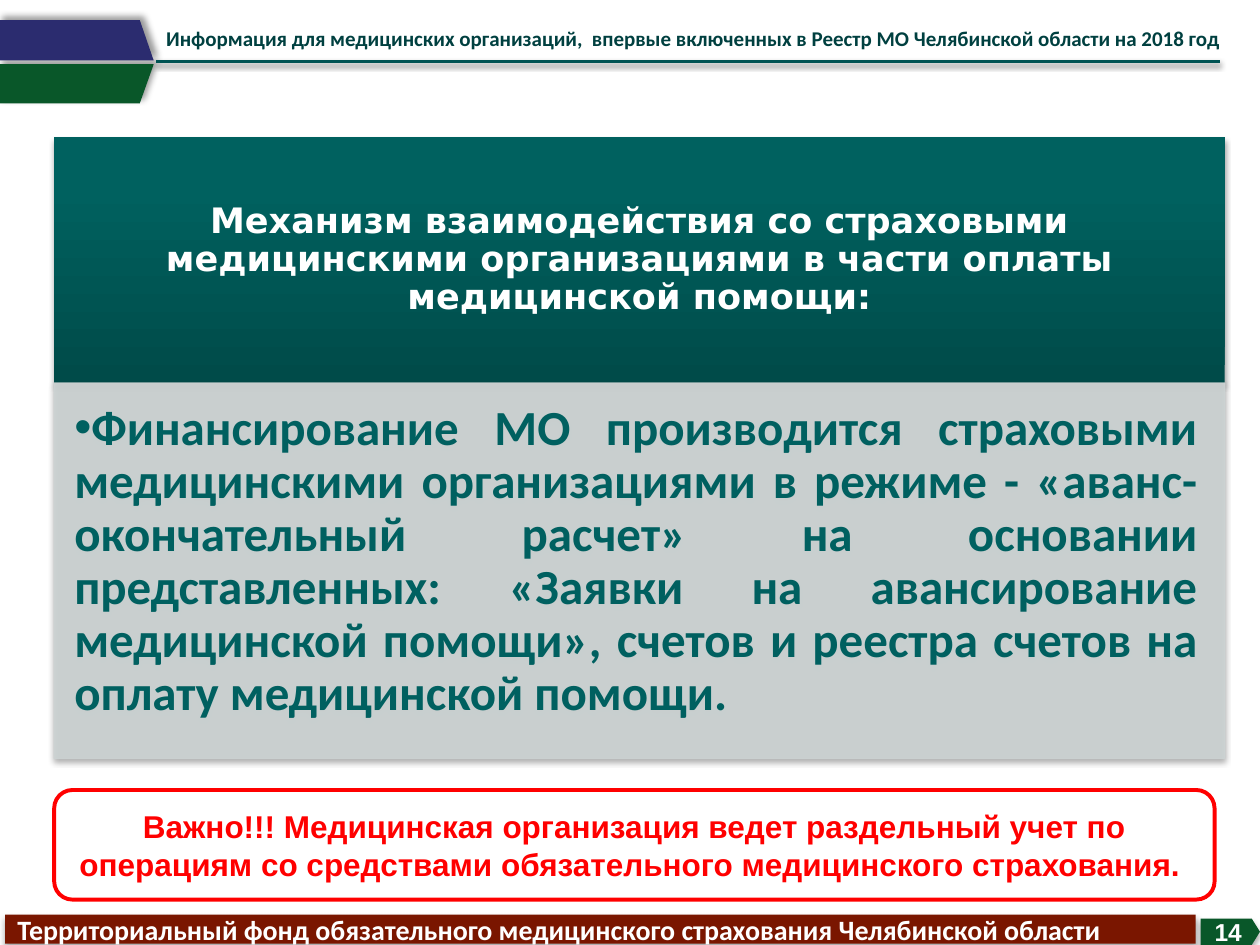
from lxml.etree import SubElement
from pptx import Presentation
from pptx.dml.color import RGBColor
from pptx.enum.shapes import MSO_CONNECTOR, MSO_SHAPE
from pptx.enum.text import MSO_ANCHOR, MSO_AUTO_SIZE, PP_ALIGN
from pptx.oxml.ns import qn
from pptx.util import Inches, Pt

COLORS = {
    "white": "FFFFFF", "red": "FF0000", "green": "095729", "navy": "2B2C6F",
    "rule": "005353", "header": "004040", "panel_dark": "004B49",
    "panel": "00615F", "body": "CCD3D3", "body_text": "006060",
    "footer": "7A1600",
}
# opacity %, blur pt, distance pt, direction in degrees
SHADOWS = {
    "flag": (40, 4, 3, 315), "rule": (38, 3.1, 1.6, 90),
    "panel": (35, 3.1, 1.8, 90), "footer": (32, 3.5, 2.2, 90),
}
CELL = 0.1  # the slide is a grid of 100 columns by 75 rows


def grid(*cells):
    return [Inches(cell * CELL) for cell in cells]


class SlideBuilder:
    def __init__(self, prs):
        self.slide = prs.slides.add_slide(prs.slide_layouts[1])
        self.shapes = self.slide.shapes

    def color(self, name):
        return RGBColor.from_string(COLORS[name])

    def shadow(self, item, name=None):
        """Set the shadow; call after fill and line, as effects follow them."""
        effects = SubElement(item._element.spPr, qn("a:effectLst"))
        if name:
            opacity, blur, distance, angle = SHADOWS[name]
            outer = SubElement(
                effects, qn("a:outerShdw"), blurRad=str(Pt(blur)),
                dist=str(Pt(distance)), dir=str(angle * 60000), rotWithShape="0")
            black = SubElement(outer, qn("a:srgbClr"), val="000000")
            SubElement(black, qn("a:alpha"), val=str(opacity * 1000))

    def paint(self, item, fill, line=None, width=0.75, shadow=None):
        item.fill.solid()
        item.fill.fore_color.rgb = self.color(fill)
        if line:
            item.line.color.rgb = self.color(line)
            item.line.width = Pt(width)
        else:
            item.line.fill.background()
        self.shadow(item, shadow)

    def set_text(self, item, text, font, size, color, align=PP_ALIGN.LEFT,
                 anchor=MSO_ANCHOR.MIDDLE, insets=(1, 0.5, 1, 0.5), spacing=None):
        frame = item.text_frame
        frame.text = text
        frame.word_wrap = True
        frame.auto_size = MSO_AUTO_SIZE.NONE
        frame.vertical_anchor = anchor
        (frame.margin_left, frame.margin_top,
         frame.margin_right, frame.margin_bottom) = grid(*insets)
        paragraph = frame.paragraphs[0]
        paragraph.alignment = align
        paragraph.space_before = Pt(0)
        if spacing:
            paragraph.line_spacing = spacing
        style = paragraph.runs[0].font
        style.name, style.size, style.bold = font, Pt(size), True
        style.color.rgb = self.color(color)
        return paragraph

    def place(self, item, box):
        item.left, item.top, item.width, item.height = grid(*box)

    def box(self, kind, box, fill, **look):
        item = self.shapes.add_shape(kind, *grid(*box))
        self.paint(item, fill, **look)
        return item

    def label(self, box, text, **style):
        item = self.shapes.add_textbox(*grid(*box))
        self.set_text(item, text, anchor=MSO_ANCHOR.TOP, **style)

    def flag(self, points, fill):
        corners = [grid(*point) for point in points]
        outline = self.shapes.build_freeform(*corners[0], scale=1.0)
        outline.add_line_segments(corners[1:], close=True)
        self.paint(outline.convert_to_shape(), fill, shadow="flag")

    def rule(self, start, end, color, width):
        line = self.shapes.add_connector(
            MSO_CONNECTOR.STRAIGHT, *grid(*start), *grid(*end))
        line.line.color.rgb = self.color(color)
        line.line.width = Pt(width)
        self.shadow(line, "rule")

    def title(self, box, text, **style):
        title = self.shapes.title
        self.place(title, box)
        title.fill.gradient()
        title.fill.gradient_angle = 90
        bottom, top = title.fill.gradient_stops
        bottom.color.rgb, top.color.rgb = self.color("panel_dark"), self.color("panel")
        bottom.position, top.position = 0, 0.8
        self.shadow(title, "panel")
        self.set_text(title, text, **style)

    def body(self, box, text, **style):
        body = self.slide.placeholders[1]
        self.place(body, box)
        self.paint(body, "body", line="body", shadow="panel")
        for tint in body._element.spPr.findall(".//" + qn("a:solidFill")):
            SubElement(tint[0], qn("a:alpha"), val="90000")
        bullet = self.set_text(body, text, anchor=MSO_ANCHOR.TOP, **style)
        properties = bullet._p.get_or_add_pPr()
        properties.set("marL", "0")
        properties.set("indent", "0")
        SubElement(properties, qn("a:buChar"), char="•")


def main():
    prs = Presentation()
    prs.slide_width, prs.slide_height = grid(100, 75)
    page = SlideBuilder(prs)

    # Heading strip: two flags, rule and running header
    page.flag([(12.2, 5.1), (11.1, 8.2), (-0.1, 8.2), (-0.1, 5.1)], "green")
    page.flag([(12.2, 4.8), (11.1, 1.6), (-0.1, 1.6), (-0.1, 4.8)], "navy")
    page.rule((12.4, 4.9), (96.8, 4.9), "rule", 2)
    page.label(
        (12.2, 1.5, 87.8, 6.1),
        "Информация для медицинских организаций,  впервые включенных "
        "в Реестр МО Челябинской области на 2018 год",
        font="Calibri", size=12, color="header")

    # Main panel: title over its explanation
    left, top, width, title_height, body_height = 4.3, 10.9, 92.9, 19.5, 29.8
    page.title(
        (left, top, width, title_height),
        "Механизм взаимодействия со страховыми медицинскими организациями "
        "в части оплаты медицинской помощи:",
        font="DejaVu Sans", size=20, color="white", align=PP_ALIGN.CENTER,
        insets=(1.6, 0.9, 1.6, 0.9), spacing=0.9)
    page.body(
        (left, top + title_height, width, body_height),
        "Финансирование МО производится страховыми медицинскими организациями "
        "в режиме - «аванс-окончательный расчет» на основании представленных: "
        "«Заявки на авансирование медицинской помощи», счетов и реестра счетов "
        "на оплату медицинской помощи. ",
        font="Calibri", size=28, color="body_text", align=PP_ALIGN.JUSTIFY,
        insets=(1.6, 1.6, 2.2, 2.4), spacing=0.9)

    # Important notice
    notice = page.box(MSO_SHAPE.ROUNDED_RECTANGLE, (left, 62.7, 92.1, 8.7),
                      "white", line="red", width=2.25)
    page.set_text(
        notice,
        "Важно!!! Медицинская организация ведет раздельный учет по операциям "
        "со средствами обязательного медицинского страхования. ",
        "Arial", 18, "red", PP_ALIGN.CENTER)

    # Footer: fund name and page number
    fund = page.box(MSO_SHAPE.RECTANGLE, (0.4, 72.6, 94.5, 2.3), "footer",
                    shadow="footer")
    page.set_text(
        fund,
        "Территориальный фонд обязательного медицинского страхования "
        "Челябинской области",
        "Calibri", 16, "white")
    number = page.box(MSO_SHAPE.PENTAGON, (95.3, 72.9, 4.7, 2.1), "green",
                      shadow="footer")
    number.adjustments[0] = 0.31
    page.set_text(number, "14", "Arial", 14, "white", PP_ALIGN.CENTER,
                  insets=(0, 0.5, 0, 0.5))

    prs.save("out.pptx")


if __name__ == "__main__":
    main()
